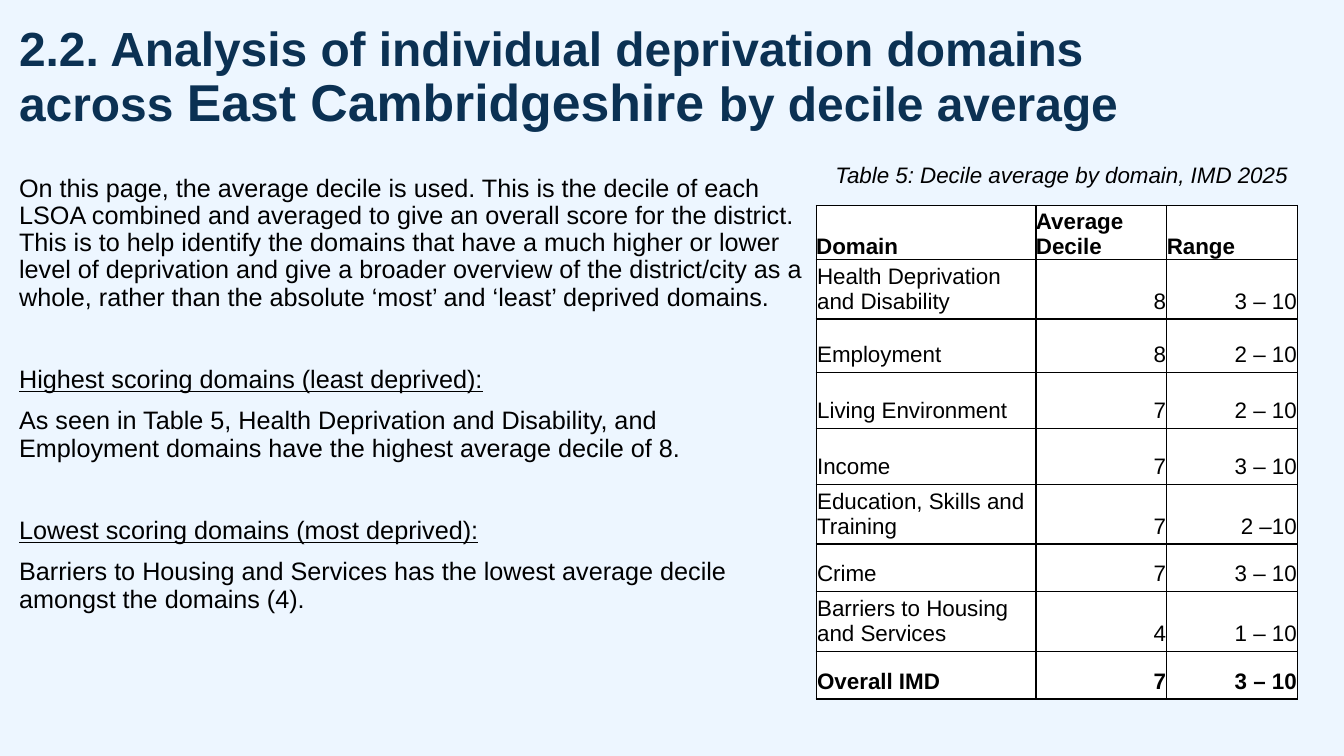
from lxml import etree
from pptx import Presentation
from pptx.dml.color import RGBColor
from pptx.enum.text import MSO_ANCHOR, PP_ALIGN
from pptx.oxml.ns import qn
from pptx.util import Pt

LEFT, RIGHT = PP_ALIGN.LEFT, PP_ALIGN.RIGHT
BOTTOM = MSO_ANCHOR.BOTTOM

FONT = "Arial"
COLORS = {"back": "EDF6FF", "title": "0B3153", "text": "000000", "cell": "FFFFFF"}

TITLE = [
    ("2.2. Analysis of individual deprivation domains across ", 34.2),
    ("East Cambridgeshire ", 37),
    ("by decile average", 34.2),
]
# text, space before, underlined
BODY = [
    ("On this page, the average decile is used. This is the decile of each LSOA "
     "combined and averaged to give an overall score for the district. This is to "
     "help identify the domains that have a much higher or lower level of deprivation "
     "and give a broader overview of the district/city as a whole, rather than the "
     "absolute ‘most’ and ‘least’ deprived domains.", 0, False),
    ("Highest scoring domains (least deprived):", 39.5, True),
    ("As seen in Table 5, Health Deprivation and Disability, and Employment domains "
     "have the highest average decile of 8.", 10, False),
    ("Lowest scoring domains (most deprived):", 39.5, True),
    ("Barriers to Housing and Services has the lowest average decile amongst the "
     "domains (4).", 10, False),
]
CAPTION = "Table 5: Decile average by domain, IMD 2025"
ROWS = [
    ("Domain", "Average Decile", "Range"),
    ("Health Deprivation and Disability", "8", "3 – 10"),
    ("Employment", "8", "2 – 10"),
    ("Living Environment", "7", "2 – 10"),
    ("Income", "7", "3 – 10"),
    ("Education, Skills and Training", "7", "2 –10"),
    ("Crime", "7", "3 – 10"),
    ("Barriers to Housing and Services", "4", "1 – 10"),
    ("Overall IMD", "7", "3 – 10"),
]
WIDTHS = [157, 93.5, 93.5]
HEIGHTS = [38, 40, 38, 40, 40, 40, 34, 40, 34]


def color(name):
    return RGBColor.from_string(COLORS[name])


def style(run, size, name="text", bold=False):
    font = run.font
    font.name, font.size, font.bold = FONT, Pt(size), bold
    font.color.rgb = color(name)
    return font


def pad(item, left, top, right, bottom):
    item.margin_left, item.margin_top = Pt(left), Pt(top)
    item.margin_right, item.margin_bottom = Pt(right), Pt(bottom)


def add_text(slide, *box):
    frame = slide.shapes.add_textbox(*map(Pt, box)).text_frame
    frame.word_wrap = True
    return frame


def add_edges(cell):
    props = cell._tc.get_or_add_tcPr()
    for side in ("lnL", "lnR", "lnT", "lnB"):
        line = etree.SubElement(props, qn("a:" + side), w=str(Pt(1)))
        fill = etree.SubElement(line, qn("a:solidFill"))
        etree.SubElement(fill, qn("a:srgbClr"), val=COLORS["text"])


def add_title(slide):
    frame = add_text(slide, 13.7, 18, 828, 95.8)
    pad(frame, 0, 0, 0, 0)
    para = frame.paragraphs[0]
    para.line_spacing = 0.9
    para.space_after = Pt(6)
    for text, size in TITLE:
        run = para.add_run()
        run.text = text
        style(run, size, "title", True)


def add_body(slide):
    frame = add_text(slide, 13.7, 125.3, 559.4, 360.7)
    pad(frame, 0, 0, 0, 0)
    frame.text = "\n".join(text for text, _, _ in BODY)
    for para, (_, gap, under) in zip(frame.paragraphs, BODY):
        para.line_spacing = 0.9
        para.space_before = Pt(gap)
        style(para.runs[0], 18).underline = under


def add_grid(slide):
    shape = slide.shapes.add_table(
        len(ROWS), len(WIDTHS), Pt(583), Pt(146.8), Pt(sum(WIDTHS)), Pt(sum(HEIGHTS)))
    table = shape.table
    table.first_row = table.horz_banding = False
    for col, width in zip(table.columns, WIDTHS):
        col.width = Pt(width)
    for row, height in zip(table.rows, HEIGHTS):
        row.height = Pt(height)
    for i, texts in enumerate(ROWS):
        head = i == 0
        for j, text in enumerate(texts):
            cell = table.cell(i, j)
            add_edges(cell)
            cell.fill.solid()
            cell.fill.fore_color.rgb = color("cell")
            cell.vertical_anchor = BOTTOM
            pad(cell, *((0, 0, 0, 0) if head else (0.7, 0.7, 0.7, 3.6)))
            cell.text_frame.text = text
            para = cell.text_frame.paragraphs[0]
            para.alignment = LEFT if head or j == 0 else RIGHT
            style(para.runs[0], 16, bold=head or i == len(ROWS) - 1)


def add_caption(slide):
    frame = add_text(slide, 589.7, 111.6, 360, 26.6)
    frame.text = CAPTION
    style(frame.paragraphs[0].runs[0], 16).italic = True


def main():
    deck = Presentation()
    deck.slide_width, deck.slide_height = Pt(960), Pt(540)
    slide = deck.slides.add_slide(deck.slide_layouts[6])
    slide.background.fill.solid()
    slide.background.fill.fore_color.rgb = color("back")
    add_title(slide)
    add_body(slide)
    add_grid(slide)
    add_caption(slide)
    deck.save("out.pptx")


if __name__ == "__main__":
    main()
